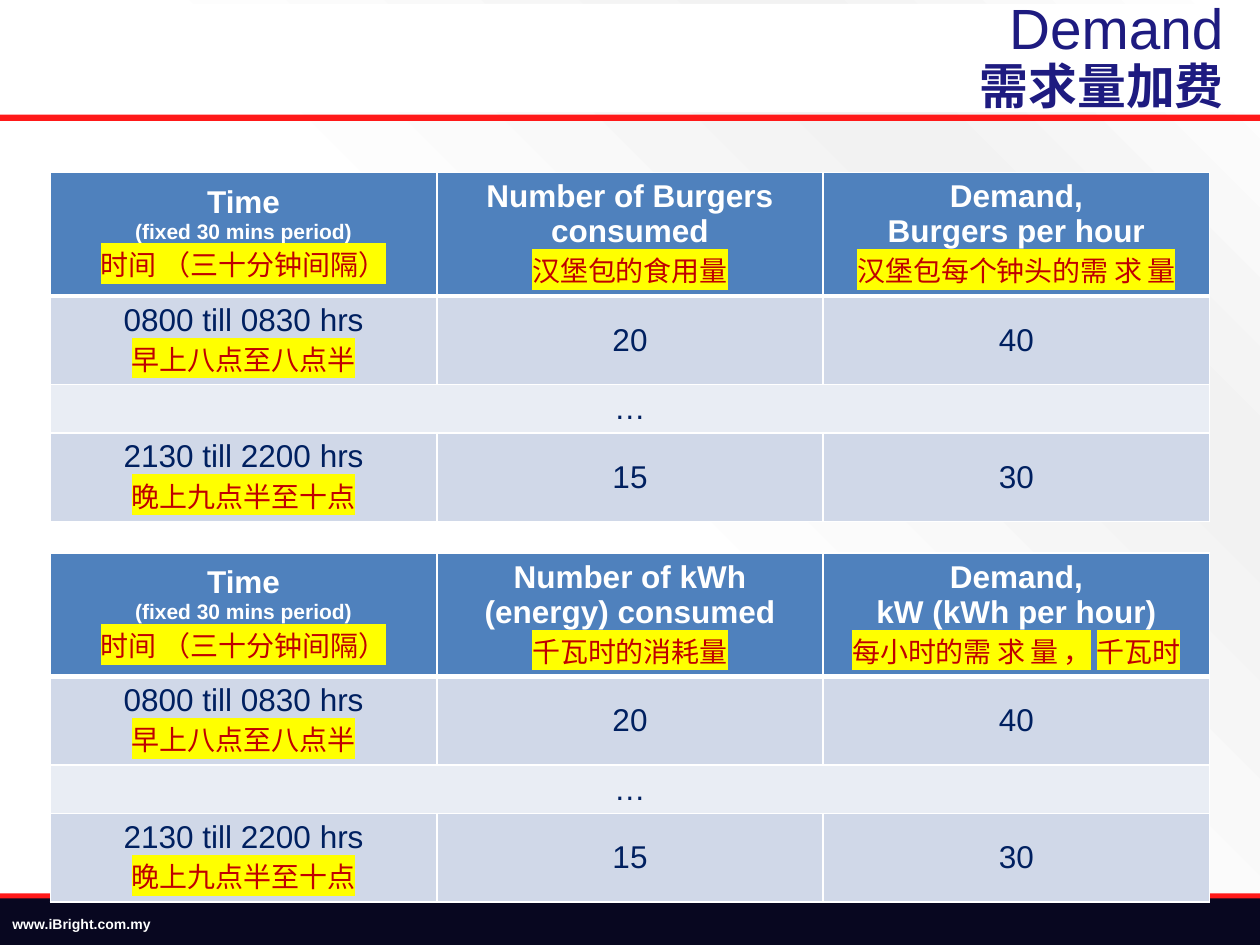
"""Build the bilingual slide that compares burger demand with kWh demand."""
from lxml import etree
from pptx import Presentation
from pptx.dml.color import RGBColor
from pptx.enum.shapes import MSO_SHAPE
from pptx.enum.text import MSO_ANCHOR, PP_ALIGN
from pptx.oxml import parse_xml
from pptx.oxml.ns import nsdecls, qn
from pptx.util import Inches, Pt

RECT = MSO_SHAPE.RECTANGLE
MIDDLE = MSO_ANCHOR.MIDDLE
LEFT, CENTER, RIGHT = PP_ALIGN.LEFT, PP_ALIGN.CENTER, PP_ALIGN.RIGHT
LATIN, CJK = "Arial", "Noto Sans CJK SC"
COLORS = {"white": "FFFFFF", "grey": "F2F2F2", "red": "FF1919", "footer": "080720",
          "title": "1E1B80", "header": "4F81BD", "odd": "D0D8E8", "even": "E9EDF4",
          "body": "002060", "chinese": "C00000", "mark": "FFFF00"}
STYLES = {  # size, font, color, bold
    "title": (32.4, LATIN, "title", False),
    "title_zh": (27.9, LATIN, "title", True),
    "footer": (8, LATIN, "white", True),
    "head": (18, LATIN, "white", True),
    "note": (12, LATIN, "white", True),
    "body": (18, LATIN, "body", False),
    "zh": (16, CJK, "chinese", False),
    "zh_wide": (16, CJK, "chinese", False),
}
STYLES = dict(STYLES)


def rgb(name):
    return RGBColor.from_string(COLORS[name])


def style_run(r, style):
    size, font, color, bold = STYLES[style]
    r.font.size, r.font.name, r.font.bold = Pt(size), font, bold
    r.font.color.rgb = rgb(color)
    rPr = r.font._element
    if font == CJK:
        rPr.find(qn("a:latin")).addnext(
            parse_xml(f'<a:ea {nsdecls("a")} typeface="{CJK}"/>'))
        rPr.find(qn("a:solidFill")).addnext(parse_xml(
            f'<a:highlight {nsdecls("a")}><a:srgbClr val="{COLORS["mark"]}"/></a:highlight>'))
    if style == "zh_wide":
        rPr.set("spc", "300")


prs = Presentation()
prs.slide_width, prs.slide_height = Inches(10), Inches(7.5)
X, Y = prs.slide_width / 100, prs.slide_height / 100
s = prs.slides.add_slide(prs.slide_layouts[5])

s.background.fill.solid()
bgPr = s.background._cSld.find(qn("p:bg")).find(qn("p:bgPr"))
stops = "".join(f'<a:gs pos="{pos * 1000}"><a:srgbClr val="{COLORS[c]}"/></a:gs>'
                for pos, c in ((0, "white"), (22, "grey"), (53, "white"), (82, "white")))
bgPr.replace(bgPr.find(qn("a:solidFill")), parse_xml(
    f'<a:gradFill {nsdecls("a")} rotWithShape="1"><a:gsLst>{stops}</a:gsLst>'
    '<a:path path="circle"><a:fillToRect l="100000" b="100000"/></a:path></a:gradFill>'))

sp = s.shapes.title
sp.left, sp.top, sp.width, sp.height = int(15.2 * X), int(0.4 * Y), int(85 * X), int(11.47 * Y)
sp.fill.solid()
sp.fill.fore_color.rgb = rgb("white")
tf = sp.text_frame
tf.text = "Demand\v需求量加费"
tf.word_wrap, tf.vertical_anchor = True, MIDDLE
tf.margin_left = tf.margin_right = Inches(0.31)
tf.margin_top = tf.margin_bottom = Inches(0.08)
p = tf.paragraphs[0]
p.alignment, p.line_spacing = RIGHT, 0.9
for r, style in zip(p.runs, ("title", "title_zh")):
    style_run(r, style)

for top, height, color in ((12.13, 0.67, "red"), (94.53, 0.67, "red"), (95.07, 5.33, "footer")):
    sp = s.shapes.add_shape(RECT, 0, int(top * Y), int(100 * X), int(height * Y))
    sp.shadow.inherit = False
    sp.fill.solid()
    sp.fill.fore_color.rgb = rgb(color)
    sp.line.fill.background()
tf = sp.text_frame
tf.text = "www.iBright.com.my"
tf.vertical_anchor = MIDDLE
tf.paragraphs[0].alignment = LEFT
style_run(tf.paragraphs[0].runs[0], "footer")

time_head = [[("Time", "head")], [("(fixed 30 mins period)", "note")],
             [("时间 （三十分钟间隔）", "zh")]]
body_rows = [
    [[[("0800 till 0830 hrs", "body")], [("早上八点至八点半", "zh")]],
     [[("20", "body")]], [[("40", "body")]]],
    [[[("…", "body")]]],
    [[[("2130 till 2200 hrs", "body")], [("晚上九点半至十点", "zh")]],
     [[("15", "body")]], [[("30", "body")]]],
]
burger_heads = [
    time_head,
    [[("Number of Burgers consumed", "head")], [("汉堡包的食用量", "zh")]],
    [[("Demand,", "head")], [("Burgers per hour", "head")],
     [("汉堡包每个钟头的", "zh"), ("需求量", "zh_wide")]],
]
energy_heads = [
    time_head,
    [[("Number of kWh (energy) consumed", "head")], [("千瓦时的消耗量", "zh")]],
    [[("Demand,", "head")], [("kW (kWh per hour)", "head")],
     [("每小时的", "zh"), ("需求量，", "zh_wide"), ("千瓦时", "zh")]],
]
row_heights = (12.9, 9.3, 5.15, 9.3)
row_fills = ("header", "odd", "even", "odd")

for top, heads in ((18.27, burger_heads), (58.53, energy_heads)):
    table = s.shapes.add_table(4, 3, int(4 * X), int(top * Y), int(92 * X),
                               int(sum(row_heights) * Y)).table
    for row, height in zip(table.rows, row_heights):
        row.height = int(height * Y)
    table.cell(2, 0).merge(table.cell(2, 2))
    for i, fill in enumerate(row_fills):
        for cell in table.rows[i].cells:
            tcPr = cell._tc.get_or_add_tcPr()
            for side in "LRTB":
                thick = (i, side) in ((0, "B"), (1, "T"))
                ln = etree.SubElement(tcPr, qn(f"a:ln{side}"), w=str(Pt(3 if thick else 1)))
                etree.SubElement(etree.SubElement(ln, qn("a:solidFill")), qn("a:srgbClr"),
                                 val=COLORS["white"])
            cell.fill.solid()
            cell.fill.fore_color.rgb = rgb(fill)
            cell.vertical_anchor = MIDDLE
    for i, cells in enumerate([heads] + body_rows):
        for j, lines in enumerate(cells):
            tf = table.cell(i, j).text_frame
            for k, line in enumerate(lines):
                p = tf.add_paragraph() if k else tf.paragraphs[0]
                p.alignment = CENTER
                for text, style in line:
                    r = p.add_run()
                    r.text = text
                    style_run(r, style)

prs.save("out.pptx")
